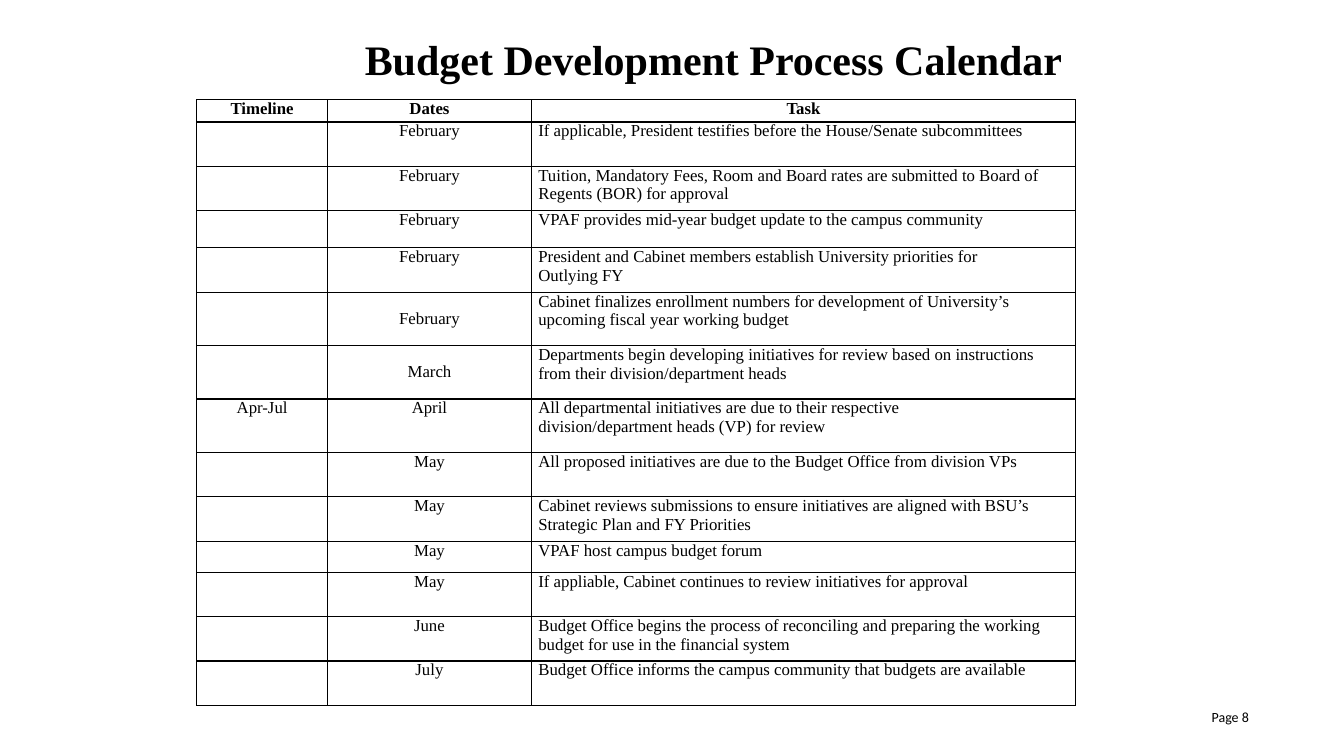
from dataclasses import dataclass

from lxml import etree
from pptx import Presentation
from pptx import util as u
from pptx.dml.color import RGBColor
from pptx.enum import text as t
from pptx.oxml.ns import qn


@dataclass(frozen=True)
class Theme:
    ink: str = "000000"
    serif: str = "Times New Roman"
    sans: str = "Calibri"
    title_size: int = 30
    table_size: int = 12
    page_size: int = 10
    border_width: float = 1


THEME = Theme()
SLIDE_SIZE = (13.33, 7.5)
COLUMNS = (1.3, 2.02, 5.4)
HEADER_HEIGHT = 0.22
TASK_INDENT = 0.07
TASK_MARGIN = 0.28
NARROW_MARGIN = 0.6

HEADINGS = ("Timeline", "Dates", "Task")
# Row height, timeline, date, task
CALENDAR = [
    (0.44, "", "February", "If applicable, President testifies before the House/Senate subcommittees"),
    (0.44, "", "February", "Tuition, Mandatory Fees, Room and Board rates are submitted to "
                           "Board of Regents (BOR) for approval"),
    (0.37, "", "February", "VPAF provides mid-year budget update to the campus community"),
    (0.44, "", "February", "President and Cabinet members establish University priorities for Outlying FY"),
    (0.53, "", "February", "Cabinet finalizes enrollment numbers for development of University’s "
                           "upcoming fiscal year working budget"),
    (0.53, "", "March", "Departments begin developing initiatives for review based on "
                        "instructions from their division/department heads"),
    (0.53, "Apr-Jul", "April", "All departmental initiatives are due to their respective "
                               "division/department heads (VP) for review"),
    (0.44, "", "May", "All proposed initiatives are due to the Budget Office from division VPs"),
    (0.44, "", "May", "Cabinet reviews submissions to ensure initiatives are aligned with "
                      "BSU’s Strategic Plan and FY Priorities"),
    (0.31, "", "May", "VPAF host campus budget forum"),
    (0.44, "", "May", "If appliable, Cabinet continues to review initiatives for approval"),
    (0.44, "", "June", "Budget Office begins the process of reconciling and preparing the "
                       "working budget for use in the financial system"),
    (0.44, "", "July", "Budget Office informs the campus community that budgets are available"),
]
MIDDLE_DATE_ROWS = (5, 6)
NARROW_TASK_ROWS = (4, 7)


def write(frame, words, size, font=THEME.serif, bold=False, align=t.PP_ALIGN.LEFT):
    """Put one formatted paragraph in a text frame."""
    frame.word_wrap = True
    paragraph = frame.paragraphs[0]
    paragraph.alignment = align
    paragraph.font.size = u.Pt(size)
    if words:
        run = paragraph.add_run()
        run.text = words
        run.font.size = u.Pt(size)
        run.font.name = font
        run.font.bold = bold
        run.font.color.rgb = RGBColor.from_string(THEME.ink)


def add_borders(cell):
    properties = cell._tc.get_or_add_tcPr()
    for position, side in enumerate(("a:lnL", "a:lnR", "a:lnT", "a:lnB")):
        line = etree.Element(qn(side), w=str(u.Pt(THEME.border_width)))
        fill = etree.SubElement(line, qn("a:solidFill"))
        etree.SubElement(fill, qn("a:srgbClr"), val=THEME.ink)
        properties.insert(position, line)


def format_cell(cell, words, **text_format):
    cell.margin_left = cell.margin_right = cell.margin_top = cell.margin_bottom = 0
    cell.fill.background()
    add_borders(cell)
    write(cell.text_frame, words, THEME.table_size, **text_format)


def add_title(slide, left, top, width, height):
    title = slide.shapes.title
    title.left, title.top, title.width, title.height = map(u.Inches, (left, top, width, height))
    title.text_frame.vertical_anchor = t.MSO_ANCHOR.MIDDLE
    write(title.text_frame, "Budget Development Process Calendar", THEME.title_size,
          bold=True, align=t.PP_ALIGN.CENTER)


def add_calendar(slide, left, top):
    heights = [HEADER_HEIGHT] + [entry[0] for entry in CALENDAR]
    table = slide.shapes.add_table(
        len(heights), len(COLUMNS), u.Inches(left), u.Inches(top),
        u.Inches(sum(COLUMNS)), u.Inches(sum(heights))).table
    table.first_row = table.horz_banding = False
    for column, width in zip(table.columns, COLUMNS):
        column.width = u.Inches(width)
    for row, height in zip(table.rows, heights):
        row.height = u.Inches(height)

    # Header row
    for index, heading in enumerate(HEADINGS):
        format_cell(table.cell(0, index), heading, bold=True, align=t.PP_ALIGN.CENTER)

    # Calendar rows
    for number, (_, timeline, date, task) in enumerate(CALENDAR, start=1):
        timeline_cell, date_cell, task_cell = table.rows[number].cells
        format_cell(timeline_cell, timeline, align=t.PP_ALIGN.CENTER)
        format_cell(date_cell, date, align=t.PP_ALIGN.CENTER)
        format_cell(task_cell, task)
        task_cell.margin_left = u.Inches(TASK_INDENT)
        margin = NARROW_MARGIN if number in NARROW_TASK_ROWS else TASK_MARGIN
        task_cell.margin_right = u.Inches(margin)
        if number in MIDDLE_DATE_ROWS:
            date_cell.vertical_anchor = t.MSO_ANCHOR.MIDDLE


def add_page_number(slide, left, top, width, height):
    box = slide.shapes.add_textbox(*map(u.Inches, (left, top, width, height)))
    write(box.text_frame, "Page 8", THEME.page_size, font=THEME.sans)


def main():
    presentation = Presentation()
    presentation.slide_width, presentation.slide_height = map(u.Inches, SLIDE_SIZE)
    slide = presentation.slides.add_slide(presentation.slide_layouts[5])
    add_title(slide, 3.01, 0.28, 8.14, 0.61)
    add_calendar(slide, 1.95, 0.99)
    add_page_number(slide, 11.92, 6.98, 0.94, 0.27)
    presentation.save("out.pptx")


if __name__ == "__main__":
    main()
